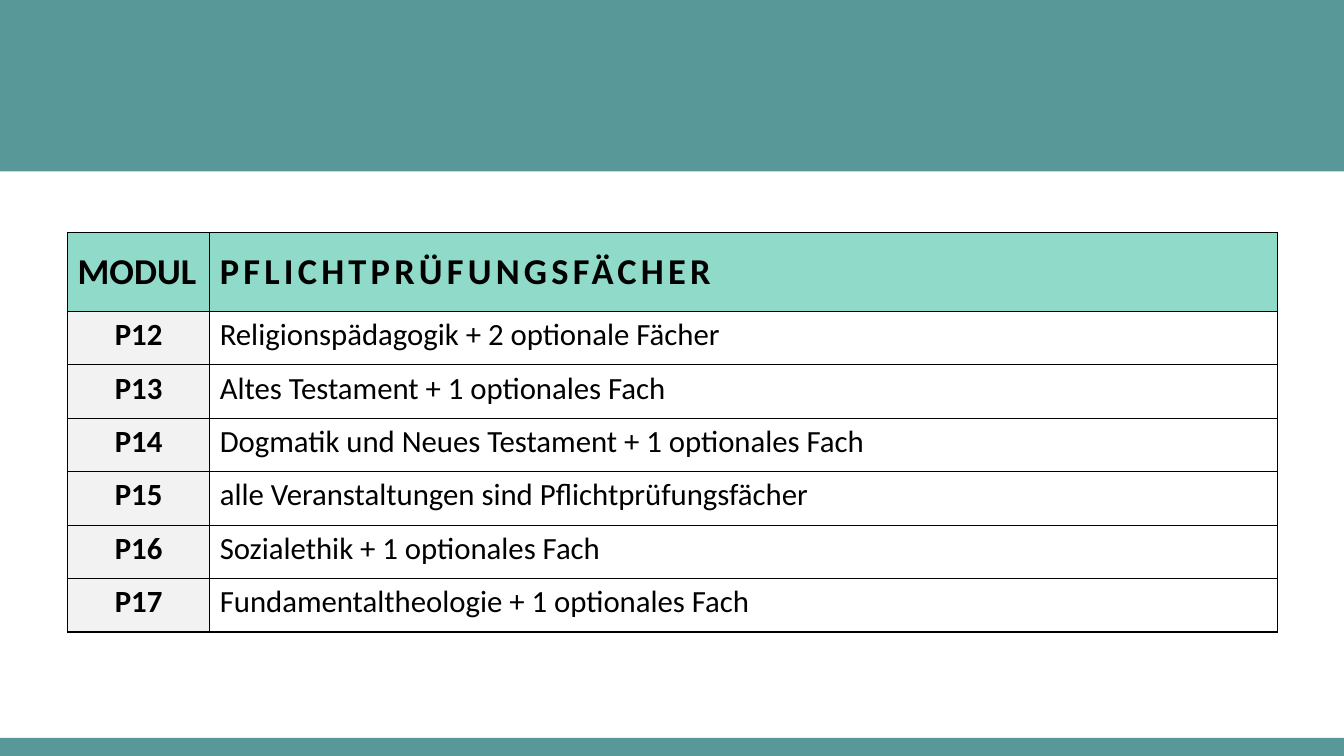
from dataclasses import dataclass

import pptx
import pptx.dml.color
import pptx.enum.shapes
import pptx.enum.text
import pptx.oxml.ns
import pptx.util
from lxml import etree

Inches = pptx.util.Inches
Align = pptx.enum.text.PP_ALIGN
Anchor = pptx.enum.text.MSO_ANCHOR


@dataclass(frozen=True)
class Theme:
    font: str = "Calibri"
    header_size: int = 26
    body_size: int = 22
    ink: str = "000000"
    band: str = "589898"
    header: str = "8FDAC8"
    module: str = "F2F2F2"
    border_width: int = 1


def rgb(color):
    return pptx.dml.color.RGBColor.from_string(color)


def write(frame, text, *, font, size, color, bold=False, align=Align.LEFT, spacing=0):
    """Put one formatted line of text in a frame; spacing is in points."""
    paragraph = frame.paragraphs[0]
    paragraph.alignment = align
    run = paragraph.add_run()
    run.text = text
    run.font.name = font
    run.font.size = pptx.util.Pt(size)
    run.font.bold = bold
    run.font.color.rgb = rgb(color)
    if spacing:
        run.font._element.set("spc", str(spacing * 100))


class SlideBuilder:
    def __init__(self, slide, theme):
        self.slide = slide
        self.theme = theme

    def band(self, top, width, height):
        bar = self.slide.shapes.add_shape(
            pptx.enum.shapes.MSO_SHAPE.RECTANGLE,
            0, Inches(top), Inches(width), Inches(height))
        bar.shadow.inherit = False
        bar.fill.solid()
        bar.fill.fore_color.rgb = rgb(self.theme.band)
        bar.line.fill.background()

    def border(self, cell):
        properties = cell._tc.get_or_add_tcPr()
        qn = pptx.oxml.ns.qn
        for side in ("a:lnL", "a:lnR", "a:lnT", "a:lnB"):
            width = pptx.util.Pt(self.theme.border_width)
            line = etree.SubElement(properties, qn(side), w=str(int(width)))
            fill = etree.SubElement(line, qn("a:solidFill"))
            etree.SubElement(fill, qn("a:srgbClr"), val=self.theme.ink)

    def cell(self, cell, text, fill=None, anchor=Anchor.TOP, **text_format):
        self.border(cell)
        if fill:
            cell.fill.solid()
            cell.fill.fore_color.rgb = rgb(fill)
        else:
            cell.fill.background()
        cell.vertical_anchor = anchor
        write(cell.text_frame, text, font=self.theme.font,
              color=self.theme.ink, **text_format)

    def table(self, left, top, column_widths, header_height, row_height, headings, rows):
        theme = self.theme
        height = header_height + row_height * len(rows)
        table = self.slide.shapes.add_table(
            len(rows) + 1, len(headings), Inches(left), Inches(top),
            Inches(sum(column_widths)), Inches(height)).table
        for column, width in zip(table.columns, column_widths):
            column.width = Inches(width)
        for index, row in enumerate(table.rows):
            row.height = Inches(row_height if index else header_height)

        # Header row
        for column, (heading, spacing) in enumerate(headings):
            self.cell(table.cell(0, column), heading, theme.header, Anchor.MIDDLE,
                      size=theme.header_size, bold=True, spacing=spacing)

        # Module rows
        for index, (module, subjects) in enumerate(rows, start=1):
            self.cell(table.cell(index, 0), module, theme.module,
                      size=theme.body_size, bold=True, align=Align.CENTER)
            self.cell(table.cell(index, 1), subjects, size=theme.body_size)


def main():
    presentation = pptx.Presentation()
    presentation.slide_width = Inches(13.33)
    presentation.slide_height = Inches(7.5)
    blank_layout = presentation.slide_layouts[6]
    builder = SlideBuilder(presentation.slides.add_slide(blank_layout), Theme())

    # Top and bottom bands
    builder.band(top=0, width=13.33, height=1.7)
    builder.band(top=7.32, width=13.33, height=0.18)

    # Compulsory exam subjects by module
    exam_subjects = [
        ("P12", "Religionspädagogik + 2 optionale Fächer"),
        ("P13", "Altes Testament + 1 optionales Fach"),
        ("P14", "Dogmatik und Neues Testament + 1 optionales Fach"),
        ("P15", "alle Veranstaltungen sind Pflichtprüfungsfächer"),
        ("P16", "Sozialethik + 1 optionales Fach"),
        ("P17", "Fundamentaltheologie + 1 optionales Fach"),
    ]
    builder.table(
        left=0.67, top=2.31, column_widths=(1.41, 10.59),
        header_height=0.78, row_height=0.53,
        headings=[("MODUL", 0), ("PFLICHTPRÜFUNGSFÄCHER", 3)],
        rows=exam_subjects)

    presentation.save("out.pptx")


if __name__ == "__main__":
    main()
